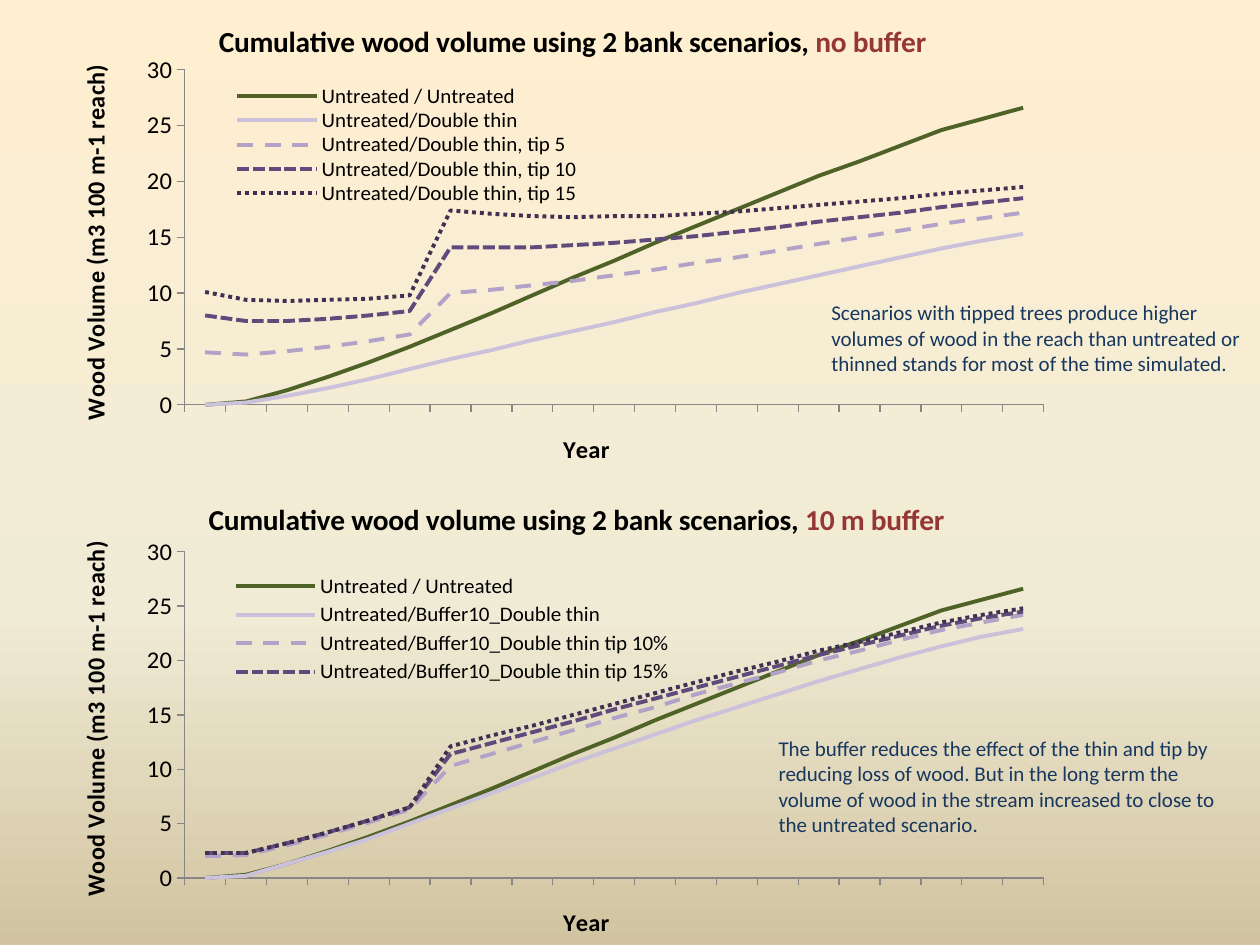
"""Build a slide with two line charts of wood volume and a comment beside each."""
from copy import deepcopy
from lxml import etree
from pptx import Presentation
from pptx.chart.data import CategoryChartData
from pptx.dml.color import RGBColor
from pptx.enum import chart as ch, dml
from pptx.oxml.ns import qn
from pptx.util import Pt


def rgb(value):
    """Return the colour of a hex string."""
    return RGBColor.from_string(value)


def place(parent, index, box, inner=False):
    """Give a chart part a manual layout in fractions of the chart."""
    for old in parent.findall(qn("c:layout")):
        parent.remove(old)
    layout = etree.Element(qn("c:layout"))
    manual = etree.SubElement(layout, qn("c:manualLayout"))
    values = [("layoutTarget", "inner")] if inner else []
    values += [("xMode", "edge"), ("yMode", "edge")]
    values += zip("xywh", box)
    for tag, value in values:
        etree.SubElement(manual, qn("c:" + tag)).set("val", str(value))
    parent.insert(index, layout)


UNTREATED = [0, 0.3, 1.3, 2.5, 3.8, 5.2, 6.7, 8.2, 9.8, 11.4, 12.9, 14.5, 16, 17.5, 19,
             20.5, 21.8, 23.2, 24.6, 25.6, 26.6]
NO_BUFFER = {
    "Untreated / Untreated": UNTREATED,
    "Untreated/Double thin": [
        0, 0.2, 0.8, 1.5, 2.3, 3.2, 4.1, 4.9, 5.8, 6.6, 7.4, 8.3, 9.1, 10, 10.8,
        11.6, 12.4, 13.2, 14, 14.7, 15.3],
    "Untreated/Double thin, tip 5": [
        4.7, 4.5, 4.8, 5.2, 5.7, 6.3, 10, 10.3, 10.7, 11.1, 11.6, 12.1, 12.7, 13.2, 13.8,
        14.4, 15, 15.6, 16.2, 16.7, 17.2],
    "Untreated/Double thin, tip 10": [
        8, 7.5, 7.5, 7.7, 8, 8.4, 14.1, 14.1, 14.1, 14.3, 14.5, 14.8, 15.1, 15.5, 15.9,
        16.4, 16.8, 17.2, 17.7, 18.1, 18.5],
    "Untreated/Double thin, tip 15": [
        10.1, 9.4, 9.3, 9.4, 9.5, 9.8, 17.4, 17.1, 16.9, 16.8, 16.9, 16.9, 17.1, 17.3, 17.6,
        17.9, 18.2, 18.5, 18.9, 19.2, 19.5],
}
BUFFER = {
    "Untreated / Untreated": UNTREATED,
    "Untreated/Buffer10_Double thin": [
        0, 0.2, 1.3, 2.4, 3.6, 5, 6.4, 7.8, 9.2, 10.6, 11.9, 13.2, 14.5, 15.7, 16.9,
        18.1, 19.2, 20.3, 21.3, 22.2, 22.9],
    "Untreated/Buffer10_Double thin tip 10%": [
        2, 2.1, 3, 4, 5.1, 6.3, 10.3, 11.4, 12.5, 13.6, 14.7, 15.7, 16.9, 17.9, 18.9,
        20, 20.9, 21.9, 22.8, 23.5, 24.2],
    "Untreated/Buffer10_Double thin tip 15%": [
        2.3, 2.3, 3.2, 4.2, 5.3, 6.5, 11.4, 12.4, 13.4, 14.4, 15.5, 16.5, 17.5, 18.5, 19.5,
        20.5, 21.4, 22.3, 23.2, 23.9, 24.5],
    "": [
        2.3, 2.3, 3.2, 4.2, 5.3, 6.5, 12.1, 13.1, 14, 15, 16, 17, 18, 19, 19.9,
        20.9, 21.7, 22.6, 23.5, 24.2, 24.8],
}
LINES = [("4F6228", dml.MSO_LINE.SOLID), ("CCC1DA", dml.MSO_LINE.SOLID),
         ("B3A2C7", dml.MSO_LINE.DASH), ("604A7B", dml.MSO_LINE.SQUARE_DOT),
         ("403152", dml.MSO_LINE.ROUND_DOT)]
CHARTS = [
    dict(top=0, height=270, ending="no buffer", series=NO_BUFFER,
         title=(0.14, 0.04), legend=(0.15, 0.18, 0.36, 0.26), volume=(0, 0.14)),
    dict(top=276.5, height=263.5, ending="10 m buffer", series=BUFFER,
         title=(0.13, 0.03), legend=(0.15, 0.19, 0.45, 0.26), volume=(0, 0.13)),
]
NOTES = [
    ((437.8, 416.9, 275.8, 65.5),
     "The buffer reduces the effect of the thin and tip by reducing loss of wood. But in the "
     "long term the volume of wood in the stream increased to close to the untreated scenario."),
    ((468, 167.8, 252, 51.1),
     "Scenarios with tipped trees produce higher volumes of wood in the reach than untreated "
     "or thinned stands for most of the time simulated."),
]

prs = Presentation()
prs.slide_width, prs.slide_height = Pt(720), Pt(540)
s = prs.slides.add_slide(prs.slide_layouts[6])

fill = s.background.fill
fill.gradient()
fill.gradient_angle = 270
first = next(s._element.iter(qn("a:gs")))
first.addnext(deepcopy(first))
for stop, (position, color) in zip(fill.gradient_stops,
                                   [(0, "FFEFD1"), (0.65, "F0EBD5"), (1, "D1C39F")]):
    stop.color.rgb = rgb(color)
    stop.position = position

for c in CHARTS:
    data = CategoryChartData()
    data.categories = [str(n) for n in range(1, 22)]
    for name, values in c["series"].items():
        data.add_series(name, values)
    chart = s.shapes.add_chart(ch.XL_CHART_TYPE.LINE, Pt(42), Pt(c["top"]), Pt(577.5),
                               Pt(c["height"]), data).chart
    chart.font.size, chart.font.name = Pt(14), "Calibri"
    chart.font.color.rgb = rgb("000000")
    chart.plots[0].vary_by_categories = False
    place(chart._chartSpace.chart.plotArea, 0, (0.11, 0.15, 0.85, 0.72), inner=True)

    for series, (color, dash) in zip(chart.plots[0].series, LINES):
        series.smooth = False
        series.marker.style = ch.XL_MARKER_STYLE.NONE
        line = series.format.line
        line.color.rgb = rgb(color)
        line.width, line.dash_style = Pt(2.25), dash

    category, value = chart.category_axis, chart.value_axis
    category.tick_label_position = ch.XL_TICK_LABEL_POSITION.NONE
    for key, number in dict(minimum_scale=0, maximum_scale=30, major_unit=5).items():
        setattr(value, key, number)
    value.tick_labels.number_format = "0"
    value.tick_labels.number_format_is_linked = False
    for axis in (category, value):
        axis.has_major_gridlines = False
        axis.major_tick_mark = ch.XL_TICK_MARK.OUTSIDE
        axis.format.line.color.rgb = rgb("868686")
        axis.format.line.width = Pt(0.75)

    heading = [("Cumulative wood volume using 2 bank scenarios, ", "000000"),
               (c["ending"], "953735")]
    for title, parts, size, box in [
            (chart.chart_title, heading, 16.8, c["title"]),
            (category.axis_title, [("Year", "000000")], 14, (0.48, 0.92)),
            (value.axis_title, [("Wood Volume (m3 100 m-1 reach)", "000000")], 14, c["volume"])]:
        p = title.text_frame.paragraphs[0]
        for text, color in parts:
            r = p.add_run()
            r.text = text
            for key, setting in dict(size=Pt(size), bold=True, name="Calibri").items():
                setattr(r.font, key, setting)
            r.font.color.rgb = rgb(color)
        place(title._element, 1, box)
    value.axis_title.text_frame._txBody.bodyPr.set("rot", "-5400000")
    value.axis_title.text_frame._txBody.bodyPr.set("vert", "horz")

    chart.has_legend = True
    legend = chart.legend
    legend.position = ch.XL_LEGEND_POSITION.RIGHT
    legend.include_in_layout = False
    legend.font.size, legend.font.name = Pt(12), "Calibri"
    legend.font.color.rgb = rgb("000000")
    place(legend._element, 1, c["legend"])
    for index, name in enumerate(c["series"]):
        if not name:
            entry = etree.Element(qn("c:legendEntry"))
            etree.SubElement(entry, qn("c:idx")).set("val", str(index))
            etree.SubElement(entry, qn("c:delete")).set("val", "1")
            legend._element.insert(1, entry)

for box, text in NOTES:
    tf = s.shapes.add_textbox(*map(Pt, box)).text_frame
    tf.word_wrap = True
    r = tf.paragraphs[0].add_run()
    r.text = text
    r.font.size, r.font.name = Pt(12), "Calibri"
    r.font.color.rgb = rgb("17375E")

prs.save("out.pptx")
